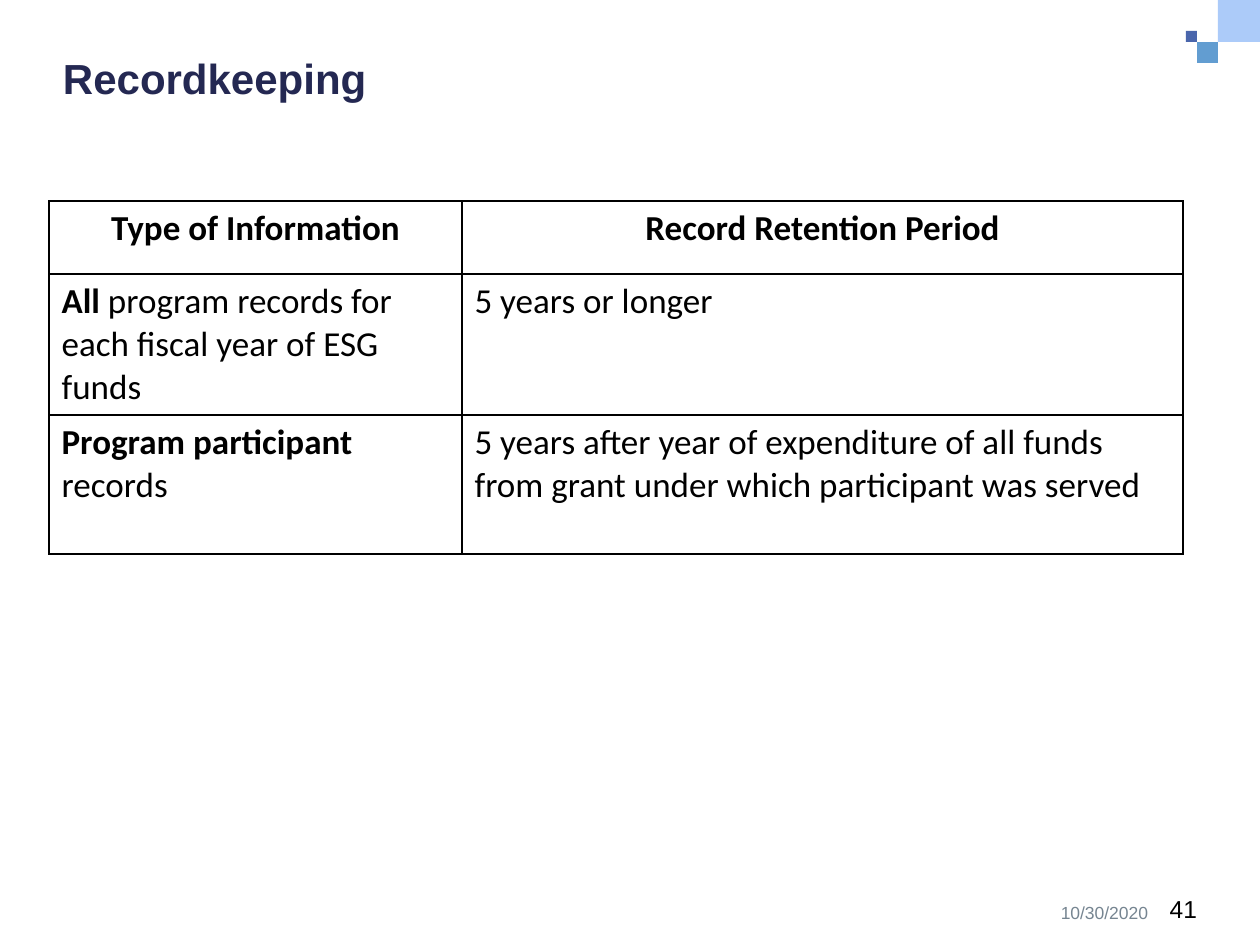
from pptx import Presentation
from pptx.dml.color import RGBColor
from pptx.enum.shapes import MSO_SHAPE
from pptx.enum.text import MSO_ANCHOR, PP_ALIGN
from pptx.oxml import parse_xml
from pptx.oxml.ns import nsdecls
from pptx.util import Pt

PX = 914400 / 126
RECTANGLE = MSO_SHAPE.RECTANGLE
TOP, BOTTOM = MSO_ANCHOR.TOP, MSO_ANCHOR.BOTTOM
LEFT, CENTER, RIGHT = PP_ALIGN.LEFT, PP_ALIGN.CENTER, PP_ALIGN.RIGHT

BLACK = RGBColor(0x00, 0x00, 0x00)
NAVY = RGBColor(0x24, 0x28, 0x52)
INDIGO = RGBColor(0x4A, 0x66, 0xAC)
BLUE = RGBColor(0x62, 0x9D, 0xD1)
PALE_BLUE = RGBColor(0xAC, 0xCB, 0xF9)
GRAY = RGBColor(0x76, 0x85, 0x91)

SQUARES = [(1186, 31, 11, INDIGO), (1197, 42, 21, BLUE), (1218, 0, 42, PALE_BLUE)]
COLUMN_WIDTHS = [413, 721]
ROW_HEIGHTS = [73, 141, 139]
RETENTION_ROWS = [
    [[("Type of Information", True)], [("Record Retention Period", True)]],
    [
        [("All ", True), ("program records for each fiscal year of ESG funds", False)],
        [("5 years or longer", False)],
    ],
    [
        [("Program participant ", True), ("records", False)],
        [("5 years after year of expenditure of all funds from grant "
          "under which participant was served", False)],
    ],
]


def px(*lengths):
    return [round(length * PX) for length in lengths]


def style_font(font, name, size, color, bold=False):
    font.name = name
    font.size = Pt(size)
    font.color.rgb = color
    font.bold = bold


def add_square(page, left, top, side, color):
    square = page.shapes.add_shape(RECTANGLE, *px(left, top, side, side))
    square.shadow.inherit = False
    square.fill.solid()
    square.fill.fore_color.rgb = color
    square.line.fill.background()


def add_text(page, bounds, text, size, color, bold=False, align=LEFT, anchor=TOP):
    frame = page.shapes.add_textbox(*px(*bounds)).text_frame
    frame.word_wrap = True
    frame.vertical_anchor = anchor
    frame.margin_left = frame.margin_top = 0
    frame.margin_right = frame.margin_bottom = 0
    frame.text = text
    para = frame.paragraphs[0]
    para.alignment = align
    style_font(para.runs[0].font, "Arial", size, color, bold)
    return para


def add_borders(cell):
    properties = cell._tc.get_or_add_tcPr()
    for side in ("lnL", "lnR", "lnT", "lnB"):
        properties.append(parse_xml(
            f'<a:{side} {nsdecls("a")} w="{Pt(1)}"><a:solidFill>'
            f'<a:srgbClr val="{BLACK}"/></a:solidFill></a:{side}>'
        ))


def fill_cell(cell, spans, align):
    para = cell.text_frame.paragraphs[0]
    para.alignment = align
    for text, bold in spans:
        span = para.add_run()
        span.text = text
        style_font(span.font, "Calibri", 20, BLACK, bold)
    add_borders(cell)
    cell.fill.background()


def add_retention_table(page, left, top):
    bounds = px(left, top, sum(COLUMN_WIDTHS), sum(ROW_HEIGHTS))
    table = page.shapes.add_table(len(ROW_HEIGHTS), len(COLUMN_WIDTHS), *bounds).table
    table.horz_banding = False
    for column, width in zip(table.columns, px(*COLUMN_WIDTHS)):
        column.width = width
    for row, height in zip(table.rows, px(*ROW_HEIGHTS)):
        row.height = height
    for row_index, row in enumerate(RETENTION_ROWS):
        align = LEFT if row_index else CENTER
        for column_index, spans in enumerate(row):
            fill_cell(table.cell(row_index, column_index), spans, align)


def main():
    deck = Presentation()
    deck.slide_width, deck.slide_height = px(1260, 945)
    page = deck.slides.add_slide(deck.slide_layouts[6])
    for square in SQUARES:
        add_square(page, *square)
    title = add_text(page, (63, 58, 1134, 98), "Recordkeeping", 24, NAVY, bold=True)
    title.line_spacing = 0.9
    add_text(page, (1148, 873, 49, 50), "41", 14, BLACK, align=RIGHT, anchor=BOTTOM)
    add_retention_table(page, 49, 201)
    add_text(page, (1017, 873, 131, 50), "10/30/2020", 10, GRAY, align=RIGHT, anchor=BOTTOM)
    deck.save("out.pptx")


if __name__ == "__main__":
    main()
